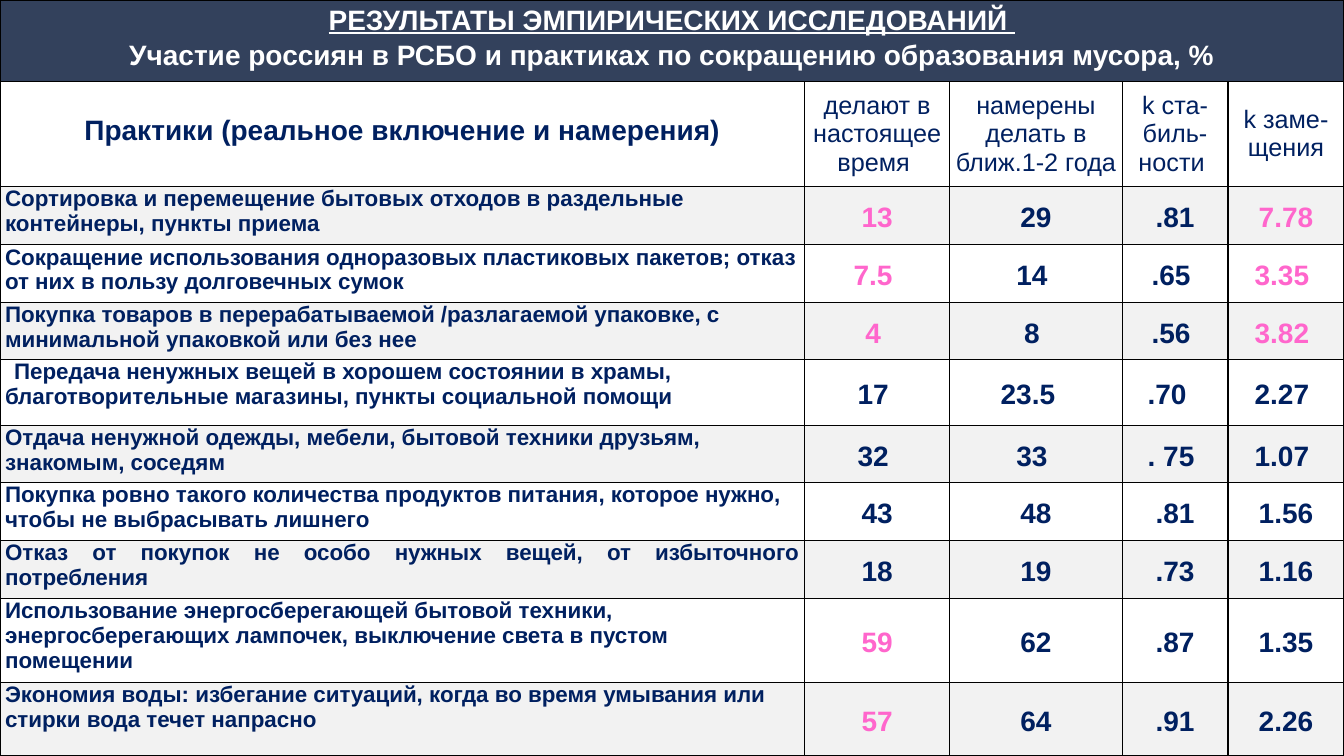
from dataclasses import dataclass

from lxml import etree
from pptx import Presentation
from pptx.dml.color import RGBColor
from pptx.enum.text import MSO_ANCHOR, PP_ALIGN
from pptx.oxml.ns import qn
from pptx.table import _Cell
from pptx.util import Inches, Pt

LEFT, CENTER, JUSTIFY = PP_ALIGN.LEFT, PP_ALIGN.CENTER, PP_ALIGN.JUSTIFY
TOP, MIDDLE = MSO_ANCHOR.TOP, MSO_ANCHOR.MIDDLE
COLORS = {"title_fill": "33415C", "band": "F2F2F2", "navy": "002060",
          "pink": "FF66CC", "white": "FFFFFF", "border": "000000"}
FONT = "Arial"
SIDE_MARGIN = 0.05
SHIFT_STEP = 0.08  # extra right margin that moves a value to the left

COLUMN_WIDTHS = [7.98, 1.44, 1.71, 1.05, 1.15]
ROW_HEIGHTS = [0.81, 1.04, 0.58, 0.57, 0.57, 0.65, 0.57, 0.57, 0.58, 0.83, 0.73]


@dataclass
class TextStyle:
    size: float
    bold: bool = True
    color: str = "navy"
    align: PP_ALIGN = CENTER
    anchor: MSO_ANCHOR = MIDDLE
    line_spacing: float = 1.0
    first_indent: float = 0
    top_margin: float = 0
    shift: int = 0


@dataclass
class Practice:
    name: str
    values: tuple[str, str, str, str]
    pink_columns: tuple[int, ...] = ()
    shifts: tuple[int, int, int, int] = (0, 0, 0, 0)
    align: PP_ALIGN = LEFT
    first_indent: float = 0


TITLE = ("РЕЗУЛЬТАТЫ ЭМПИРИЧЕСКИХ ИССЛЕДОВАНИЙ \n"
         "Участие россиян в РСБО и практиках по сокращению образования мусора, %")
PRACTICES_HEADING = "Практики (реальное включение и намерения)"
VALUE_HEADINGS = ["делают в настоящее время ", "намерены делать в ближ.1-2 года",
                  "k ста-биль-\nности ", "k заме-щения"]
PRACTICES = [
    Practice("Сортировка и перемещение бытовых отходов в раздельные контейнеры, "
             "пункты приема", ("13", "29", ".81", "7.78"), (0, 3)),
    Practice("Сокращение использования одноразовых пластиковых пакетов; отказ от них "
             "в пользу долговечных сумок", ("7.5", "14", ".65", "3.35"), (0, 3), (1, 1, 1, 1)),
    Practice("Покупка товаров в перерабатываемой /разлагаемой упаковке, с минимальной "
             "упаковкой или без нее", ("4", "8", ".56", "3.82"), (0, 3), (1, 1, 1, 1)),
    Practice("Передача ненужных вещей в хорошем состоянии в храмы, благотворительные "
             "магазины, пункты социальной помощи", ("17", "23.5", ".70", "2.27"),
             shifts=(1, 2, 2, 1), first_indent=0.09),
    Practice("Отдача ненужной одежды, мебели, бытовой техники друзьям, знакомым, соседям",
             ("32", "33", ". 75", "1.07"), shifts=(1, 1, 1, 1)),
    Practice("Покупка ровно такого количества продуктов питания, которое нужно, чтобы "
             "не выбрасывать лишнего", ("43", "48", ".81", "1.56")),
    Practice("Отказ от покупок не особо нужных вещей, от избыточного потребления ",
             ("18", "19", ".73", "1.16"), align=JUSTIFY),
    Practice("Использование энергосберегающей бытовой техники, энергосберегающих "
             "лампочек, выключение света в пустом помещении",
             ("59", "62", ".87", "1.35"), (0,)),
    Practice("Экономия воды: избегание ситуаций, когда во время умывания или стирки "
             "вода течет напрасно", ("57", "64", ".91", "2.26"), (0,)),
]


def rgb(name: str) -> RGBColor:
    return RGBColor.from_string(COLORS[name])


def frame_cell(cell: _Cell, fill: str | None) -> None:
    """Give a cell its four borders, then its fill."""
    properties = cell._tc.get_or_add_tcPr()
    for side in ("lnL", "lnR", "lnT", "lnB"):
        line = etree.SubElement(properties, qn(f"a:{side}"), w=str(Pt(1)))
        solid = etree.SubElement(line, qn("a:solidFill"))
        etree.SubElement(solid, qn("a:srgbClr"), val=COLORS["border"])
    if fill:
        cell.fill.solid()
        cell.fill.fore_color.rgb = rgb(fill)
    else:
        cell.fill.background()


def write_cell(cell: _Cell, text: str, style: TextStyle) -> None:
    cell.vertical_anchor = style.anchor
    cell.margin_left = Inches(SIDE_MARGIN)
    cell.margin_right = Inches(SIDE_MARGIN + SHIFT_STEP * style.shift)
    cell.margin_top, cell.margin_bottom = Inches(style.top_margin), 0
    cell.text_frame.text = text
    for paragraph in cell.text_frame.paragraphs:
        paragraph.alignment = style.align
        paragraph.line_spacing = style.line_spacing
        if style.first_indent:
            paragraph._p.get_or_add_pPr().set("indent", str(Inches(style.first_indent)))
        for run in paragraph.runs:
            run.font.name = FONT
            run.font.size = Pt(style.size)
            run.font.bold = style.bold
            run.font.color.rgb = rgb(style.color)


def main() -> None:
    deck = Presentation()
    deck.slide_width, deck.slide_height = Inches(13.33), Inches(7.5)
    slide = deck.slides.add_slide(deck.slide_layouts[6])

    # Table grid
    results = slide.shapes.add_table(len(ROW_HEIGHTS), len(COLUMN_WIDTHS), 0, 0,
                                     deck.slide_width, deck.slide_height).table
    results.first_row = results.horz_banding = False
    for column, width in zip(results.columns, COLUMN_WIDTHS):
        column.width = Inches(width)
    for index, (row, height) in enumerate(zip(results.rows, ROW_HEIGHTS)):
        row.height = Inches(height)
        band = "band" if index >= 2 and index % 2 == 0 else None
        for cell in row.cells:
            frame_cell(cell, "title_fill" if index == 0 else band)

    # Title row
    title = results.cell(0, 0)
    title.merge(results.cell(0, len(COLUMN_WIDTHS) - 1))
    write_cell(title, TITLE, TextStyle(20, color="white", anchor=TOP, line_spacing=1.15))
    title.text_frame.paragraphs[0].runs[0].font.underline = True

    # Column headings
    write_cell(results.cell(1, 0), PRACTICES_HEADING,
               TextStyle(20, anchor=TOP, line_spacing=1.15, top_margin=0.29))
    for column, heading in enumerate(VALUE_HEADINGS, start=1):
        write_cell(results.cell(1, column), heading, TextStyle(18, bold=False))

    # Practices and their values
    for row, practice in enumerate(PRACTICES, start=2):
        write_cell(results.cell(row, 0), practice.name,
                   TextStyle(16, align=practice.align, anchor=TOP,
                             first_indent=practice.first_indent))
        for column, (value, shift) in enumerate(zip(practice.values, practice.shifts)):
            color = "pink" if column in practice.pink_columns else "navy"
            write_cell(results.cell(row, column + 1), value,
                       TextStyle(20, color=color, line_spacing=1.15, shift=shift))

    deck.save("out.pptx")


if __name__ == "__main__":
    main()
